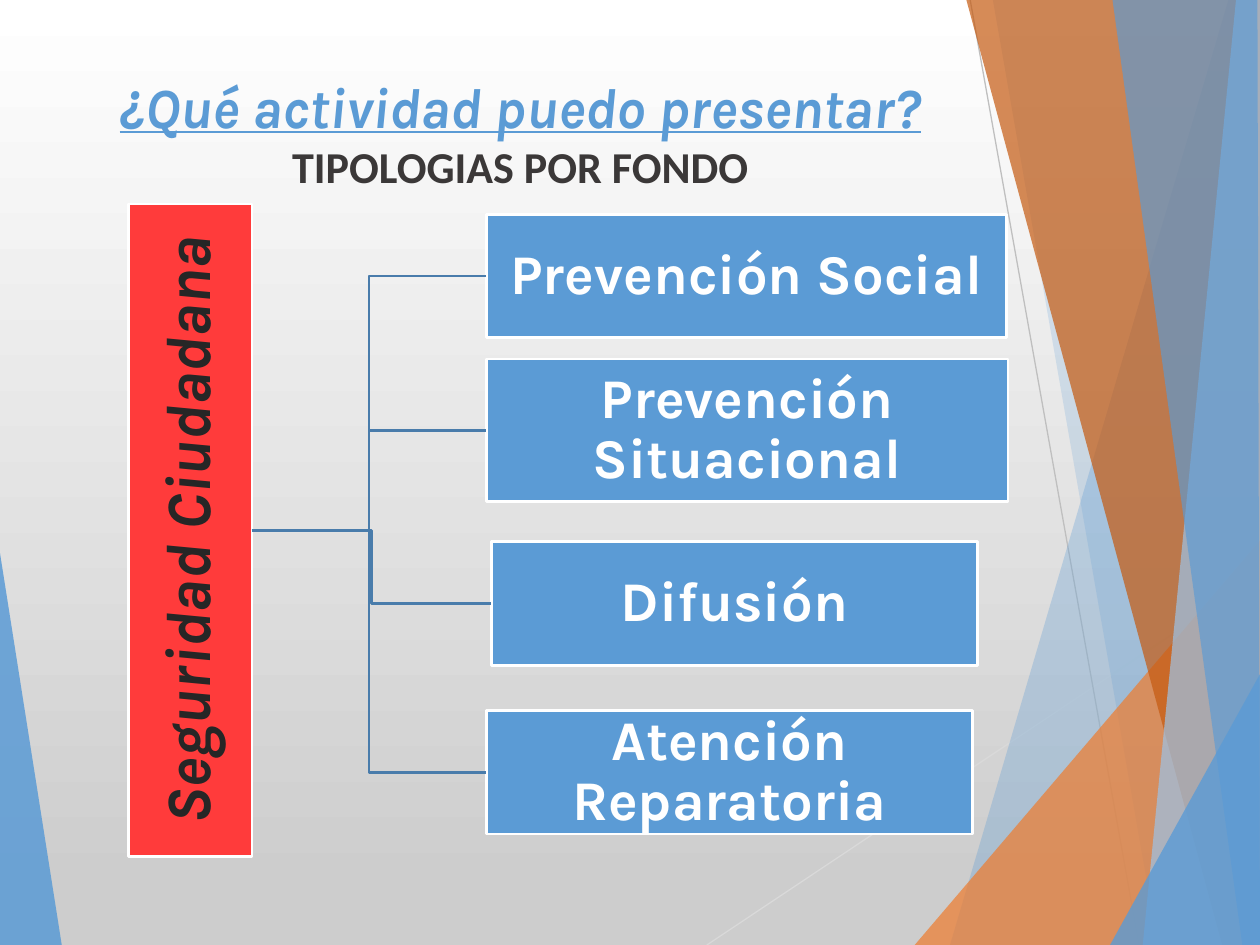
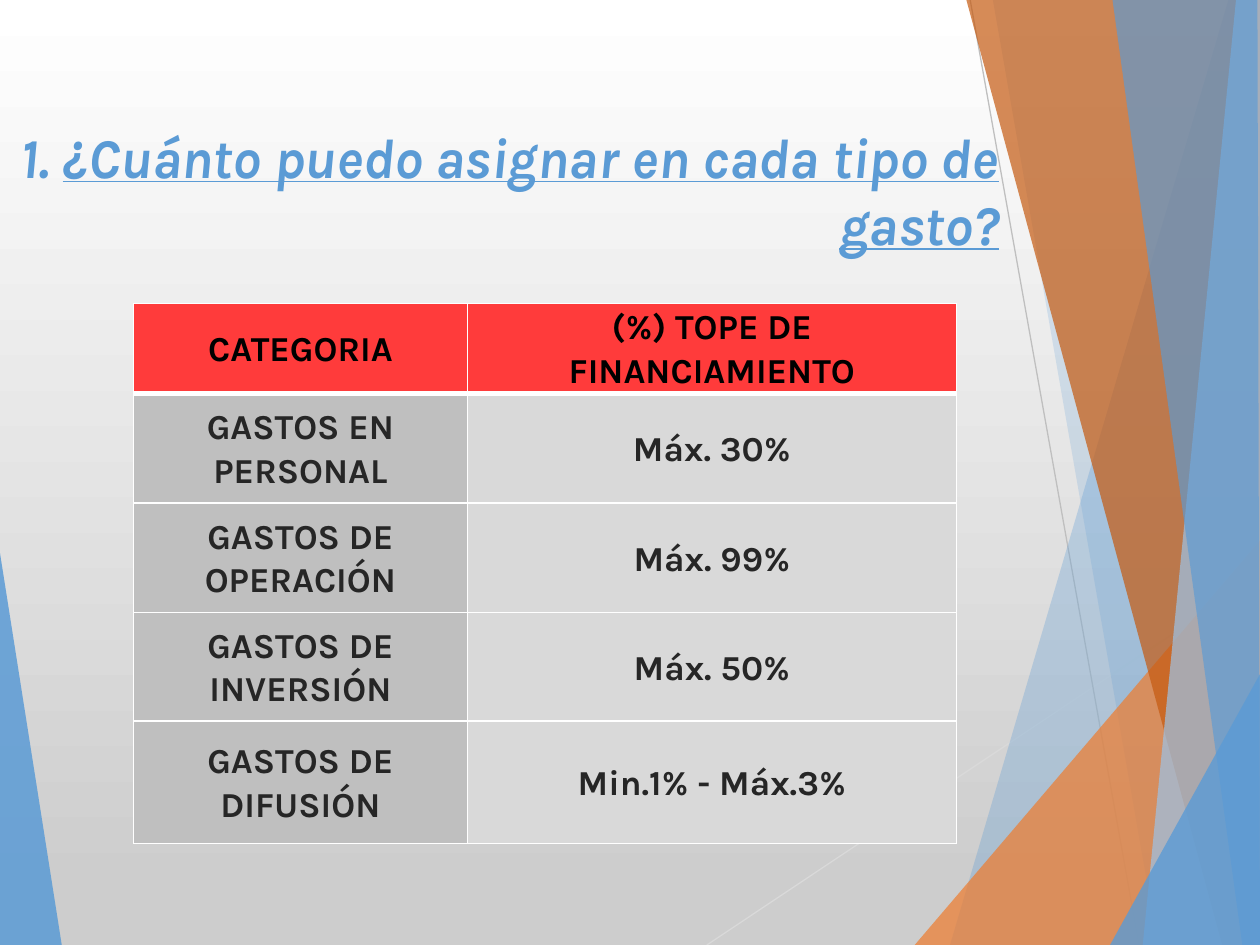
from lxml.etree import SubElement
from pptx import Presentation
from pptx.dml.color import RGBColor
from pptx.enum.shapes import MSO_CONNECTOR as LINK, MSO_SHAPE as SHAPE
from pptx.enum.text import MSO_ANCHOR as ANCHOR, PP_ALIGN as ALIGN
from pptx.oxml import parse_xml
from pptx.oxml.ns import nsdecls, qn
from pptx.util import Inches, Pt

KARLA = "Karla"
BLUE, PALE_BLUE = "5B9BD5", "9DC3E6"
ORANGE, RUST, RED = "ED7D31", "C55A11", "FF3B3B"
WHITE, BLACK, INK, DARK_GREY = "FFFFFF", "000000", "262626", "3B3838"
GREY, LIGHT_GREY, PAGE_GREY = "BFBFBF", "D9D9D9", "CDCDCD"
LINK_BLUE = "497CAB"
WIDTH, HEIGHT = 10, 7.5

RAYS = [
    ([(0, 4.39), (0.49, HEIGHT), (0, HEIGHT)], BLUE, 85),
    ([(9.75, 0), (7.54, HEIGHT), (WIDTH, HEIGHT), (WIDTH, 0)], BLUE, 30),
    ([(7.88, 0), (9.19, HEIGHT), (WIDTH, HEIGHT), (WIDTH, 0)], BLUE, 20),
    ([(7.26, HEIGHT), (WIDTH, 4.29), (WIDTH, HEIGHT)], ORANGE, 72),
    ([(7.67, 0), (9.7, HEIGHT), (WIDTH, HEIGHT), (WIDTH, 0)], RUST, 70),
    ([(9.81, 0), (9.07, HEIGHT), (WIDTH, HEIGHT), (WIDTH, 0)], PALE_BLUE, 70),
    ([(8.83, 0), (9.86, HEIGHT), (WIDTH, HEIGHT), (9.98, 0)], BLUE, 65),
    ([(8.81, HEIGHT), (WIDTH, 5.35), (WIDTH, HEIGHT)], BLUE, 80),
]
HAIRLINES = [
    ((5.61, HEIGHT), (WIDTH, 4.57), LIGHT_GREY),
    ((7.7, 0), (9.04, HEIGHT), GREY),
]
TYPOLOGIES = [
    ("Prevención Social", (3.86, 1.7, 4.13, 0.98)),
    ("Prevención Situacional", (3.86, 2.85, 4.14, 1.13)),
    ("Difusión", (3.9, 4.3, 3.86, 0.98)),
    ("Atención Reparatoria", (3.86, 5.64, 3.86, 0.98)),
]
LIMITS = [
    ("CATEGORIA", "(%) TOPE DE FINANCIAMIENTO"),
    ("GASTOS EN PERSONAL", "Máx. 30%"),
    ("GASTOS DE OPERACIÓN", "Máx. 99%"),
    ("GASTOS DE INVERSIÓN", "Máx. 50%"),
    ("GASTOS DE\nDIFUSIÓN", "Min.1% - Máx.3%"),
]


def rgb(code):
    """Turn a hex string into a colour."""
    return RGBColor.from_string(code)


def style_run(run, size, color, font=KARLA, italic=False, underline=False):
    """Format one bold run."""
    run.font.name, run.font.size, run.font.bold = font, Pt(size), True
    run.font.italic, run.font.underline = italic, underline
    run.font.color.rgb = rgb(color)


def write(frame, text, size, color, spacing, italic=False):
    """Fill a text frame with centred text, one paragraph a line."""
    frame.text = text
    for paragraph in frame.paragraphs:
        paragraph.alignment = ALIGN.CENTER
        paragraph.line_spacing = spacing
        for run in paragraph.runs:
            style_run(run, size, color, italic=italic)


def add_ray(slide, corners, color, opacity):
    """Draw a translucent polygon of the backdrop."""
    start, *others = [(Inches(x), Inches(y)) for x, y in corners]
    builder = slide.shapes.build_freeform(*start)
    builder.add_line_segments(others, close=True)
    ray = builder.convert_to_shape()
    ray.shadow.inherit = False
    ray.line.fill.background()
    ray.fill.solid()
    ray.fill.fore_color.rgb = rgb(color)
    tint = next(ray.fill._xPr.iter(qn("a:srgbClr")))
    SubElement(tint, qn("a:alpha")).set("val", str(opacity * 1000))


def add_link(slide, kind, start, end, color, weight):
    """Draw a connector without a shadow."""
    link = slide.shapes.add_connector(kind, *map(Inches, (*start, *end)))
    link.line.color.rgb = rgb(color)
    link.line.width = Pt(weight)
    SubElement(link._element.spPr, qn("a:effectLst"))
    return link


def add_backdrop_slide(deck):
    """Add a blank slide with the shared gradient and rays."""
    slide = deck.slides.add_slide(deck.slide_layouts[6])
    fill = slide.background.fill
    fill.gradient()
    fill.gradient_angle = 270
    for stop, color, position in zip(fill.gradient_stops, (WHITE, PAGE_GREY), (0, 0.94)):
        stop.color.rgb = rgb(color)
        stop.position = position
    add_ray(slide, *RAYS[0])
    for start, end, color in HAIRLINES:
        add_link(slide, LINK.STRAIGHT, start, end, color, 0.75)
    for ray in RAYS[1:]:
        add_ray(slide, *ray)
    return slide


def add_title(slide, area, question, size, align, number=""):
    """Add the underlined question, after its number if it has one."""
    frame = slide.shapes.add_textbox(*map(Inches, area)).text_frame
    frame.word_wrap = True
    heading = frame.paragraphs[0]
    heading.alignment = align
    for text, underline in ((number, False), (question, True)):
        if text:
            run = heading.add_run()
            run.text = text
            style_run(run, size, BLUE, italic=True, underline=underline)
    return frame


def add_box(slide, text, area, fill, size, color, italic=False):
    """Add a white-edged rectangle with centred text."""
    box = slide.shapes.add_shape(SHAPE.RECTANGLE, *map(Inches, area))
    box.shadow.inherit = False
    box.fill.solid()
    box.fill.fore_color.rgb = rgb(fill)
    box.line.color.rgb = rgb(WHITE)
    box.line.width = Pt(1.5)
    frame = box.text_frame
    frame.word_wrap = True
    frame.vertical_anchor = ANCHOR.MIDDLE
    frame.margin_left = frame.margin_right = Inches(0.02)
    frame.margin_top = frame.margin_bottom = Inches(0.02)
    write(frame, text, size, color, 0.9, italic)
    return box


def add_branch(slide, root, leaf):
    """Join the root's right side to a leaf's left side."""
    branch = add_link(slide, LINK.ELBOW, (0, 0), (1, 1), LINK_BLUE, 1.5)
    branch.begin_connect(root, 3)
    branch.end_connect(leaf, 1)


def set_borders(cell, bottom):
    """Give a cell white borders, with its own bottom weight."""
    properties = cell._tc.get_or_add_tcPr()
    for index, (side, weight) in enumerate(zip("LRTB", (1, 1, 1, bottom))):
        properties.insert(index, parse_xml(
            f'<a:ln{side} {nsdecls("a")} w="{Pt(weight)}"><a:solidFill>'
            f'<a:srgbClr val="{WHITE}"/></a:solidFill></a:ln{side}>'))


def add_limits_table(slide):
    """Add the table of spending limits."""
    table = slide.shapes.add_table(
        len(LIMITS), 2, *map(Inches, (1.06, 2.41, 6.53, 4.28))).table
    table.horz_banding = False
    for column, width in zip(table.columns, (2.65, 3.88)):
        column.width = Inches(width)
    for row, height in zip(table.rows, (0.71, 0.87, 0.87, 0.86, 0.97)):
        row.height = Inches(height)
    for row, texts in enumerate(LIMITS):
        fills = (GREY, LIGHT_GREY) if row else (RED, RED)
        for column, (text, fill) in enumerate(zip(texts, fills)):
            cell = table.cell(row, column)
            cell.vertical_anchor = ANCHOR.MIDDLE
            cell.margin_left = cell.margin_right = Inches(0.02)
            cell.margin_top = cell.margin_bottom = 0
            cell.fill.solid()
            cell.fill.fore_color.rgb = rgb(fill)
            write(cell.text_frame, text, 20, INK if row else BLACK, 1.07)
            set_borders(cell, 1 if row else 3)


def build_typologies(deck):
    """Build the slide of typologies by fund."""
    slide = add_backdrop_slide(deck)
    frame = add_title(slide, (0.43, 0.52, 7.4, 1.44),
                      "¿Qué actividad puedo presentar?", 32.4, ALIGN.CENTER)
    subtitle = frame.add_paragraph()
    subtitle.text = "TIPOLOGIAS POR FONDO"
    subtitle.alignment = ALIGN.CENTER
    style_run(subtitle.runs[0], 25.2, DARK_GREY, font="Calibri")
    fund = add_box(slide, "Seguridad Ciudadana", (1.02, 1.62, 0.98, 5.18),
                   RED, 36, INK, italic=True)
    fund.text_frame._txBody.bodyPr.set("vert", "vert270")
    for name, area in TYPOLOGIES:
        add_branch(slide, fund, add_box(slide, name, area, BLUE, 32, WHITE))


def build_limits(deck):
    """Build the slide of limits by kind of spending."""
    slide = add_backdrop_slide(deck)
    add_title(slide, (0, 0.92, 8.03, 1.34),
              "¿Cuánto puedo asignar en cada tipo de gasto?", 32, ALIGN.RIGHT, "1. ")
    add_limits_table(slide)


def main():
    """Build and save the deck."""
    deck = Presentation()
    deck.slide_width, deck.slide_height = Inches(WIDTH), Inches(HEIGHT)
    build_typologies(deck)
    build_limits(deck)
    deck.save("out.pptx")


if __name__ == "__main__":
    main()
